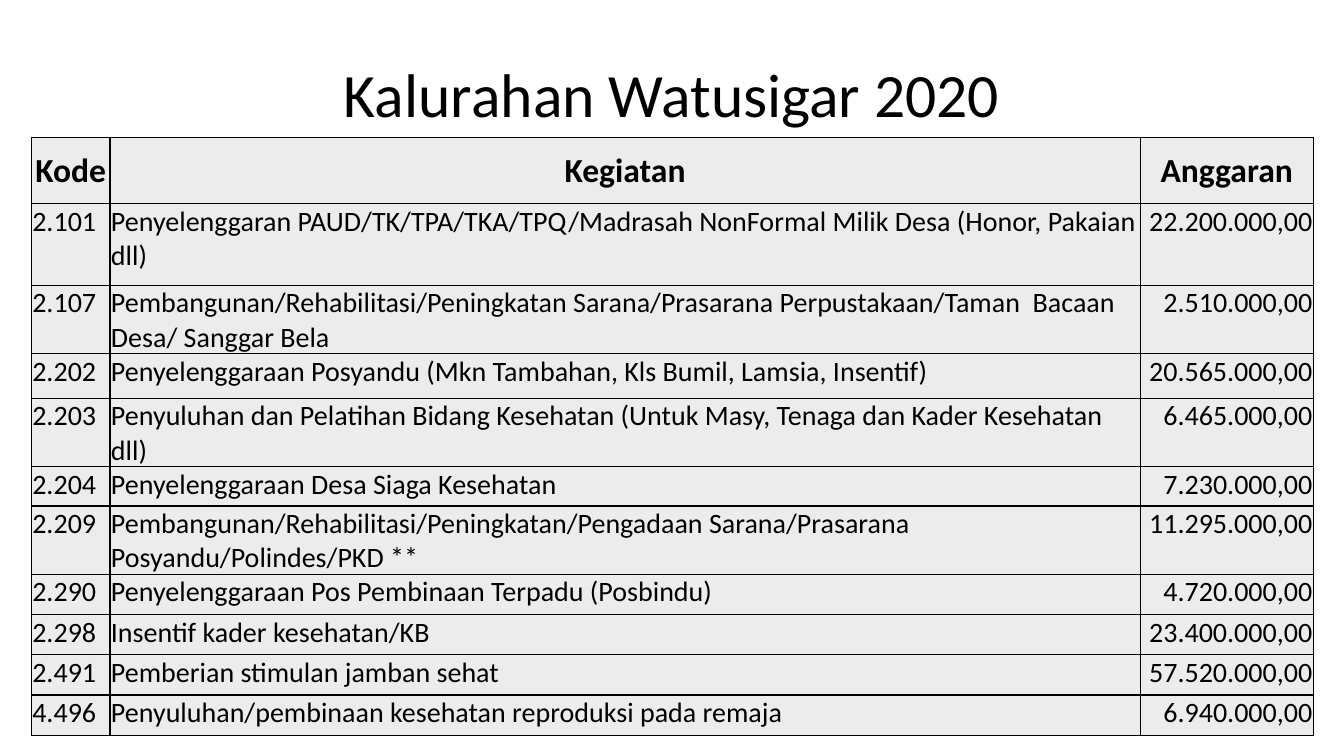
"""Builds the 2020 budget table slide of Kalurahan Watusigar."""
from typing import NamedTuple

from lxml.etree import SubElement as Sub
from pptx import Presentation as Deck
from pptx.dml.color import RGBColor as Rgb
from pptx.enum.text import MSO_ANCHOR as Anchor, PP_ALIGN as Align
from pptx.oxml.ns import qn
from pptx.util import Pt

HUES = {"ink": "000000", "cell": "ECECEC"}
FONT = "Calibri"
WIDTHS = (56.2, 735.8, 123.8)
HEADS = ("Kode", "Kegiatan", "Anggaran")
SIDES = (Align.LEFT, Align.LEFT, Align.RIGHT)


class Item(NamedTuple):
    code: str
    work: str
    cost: str
    high: float = 28.8


ITEMS = (
    Item("2.101", "Penyelenggaran PAUD/TK/TPA/TKA/TPQ/Madrasah NonFormal Milik Desa "
         "(Honor, Pakaian dll)", "22.200.000,00", 58.3),
    Item("2.107", "Pembangunan/Rehabilitasi/Peningkatan Sarana/Prasarana "
         "Perpustakaan/Taman  Bacaan Desa/ Sanggar Bela", "2.510.000,00", 34.6),
    Item("2.202", "Penyelenggaraan Posyandu (Mkn Tambahan, Kls Bumil, Lamsia, Insentif)",
         "20.565.000,00", 32),
    Item("2.203", "Penyuluhan dan Pelatihan Bidang Kesehatan (Untuk Masy, Tenaga dan "
         "Kader Kesehatan dll)", "6.465.000,00"),
    Item("2.204", "Penyelenggaraan Desa Siaga Kesehatan", "7.230.000,00", 28.2),
    Item("2.209", "Pembangunan/Rehabilitasi/Peningkatan/Pengadaan Sarana/Prasarana "
         "Posyandu/Polindes/PKD **", "11.295.000,00"),
    Item("2.290", "Penyelenggaraan Pos Pembinaan Terpadu (Posbindu)", "4.720.000,00"),
    Item("2.298", "Insentif kader kesehatan/KB", "23.400.000,00"),
    Item("2.491", "Pemberian stimulan jamban sehat", "57.520.000,00"),
    Item("4.496", "Penyuluhan/pembinaan kesehatan reproduksi pada remaja", "6.940.000,00"),
)


def write(frame, text: str, size: float, align: Align, bold: bool = False) -> None:
    frame.text = text
    para = frame.paragraphs[0]
    para.alignment = align
    font = para.font
    font.name, font.size, font.bold = FONT, Pt(size), bold
    font.color.rgb = Rgb.from_string(HUES["ink"])


def style(cell) -> None:
    cell.margin_left = cell.margin_right = cell.margin_top = Pt(0.7)
    cell.margin_bottom = 0
    props = cell._tc.get_or_add_tcPr()
    for edge in ("L", "R", "T", "B"):
        line = Sub(props, qn(f"a:ln{edge}"), w=str(Pt(1)))
        Sub(Sub(line, qn("a:solidFill")), qn("a:srgbClr"), val=HUES["ink"])
    cell.fill.solid()
    cell.fill.fore_color.rgb = Rgb.from_string(HUES["cell"])


def title(slide) -> None:
    box = slide.shapes.add_textbox(Pt(48), Pt(21.6), Pt(864), Pt(90))
    frame = box.text_frame
    frame.word_wrap = True
    frame.vertical_anchor = Anchor.MIDDLE
    write(frame, "Kalurahan Watusigar 2020", 44, Align.CENTER)


def budget(slide) -> None:
    highs = (47.5, *(item.high for item in ITEMS))
    table = slide.shapes.add_table(len(highs), len(WIDTHS), Pt(22.4), Pt(98),
                                   Pt(sum(WIDTHS)), Pt(sum(highs))).table
    table.first_row = table.horz_banding = False
    for col, width in zip(table.columns, WIDTHS):
        col.width = Pt(width)
    for row, high in zip(table.rows, highs):
        row.height = Pt(high)
    for cell in table.iter_cells():
        style(cell)
    for cell, head in zip(table.rows[0].cells, HEADS):
        cell.vertical_anchor = Anchor.MIDDLE
        write(cell.text_frame, head, 24, Align.CENTER, True)
    for num, item in enumerate(ITEMS, 1):
        texts = (item.code, item.work, item.cost)
        for cell, text, side in zip(table.rows[num].cells, texts, SIDES):
            write(cell.text_frame, text, 20, side)


def main() -> None:
    deck = Deck()
    deck.slide_width, deck.slide_height = Pt(960), Pt(540)
    slide = deck.slides.add_slide(deck.slide_layouts[6])
    title(slide)
    budget(slide)
    deck.save("out.pptx")


if __name__ == "__main__":
    main()
